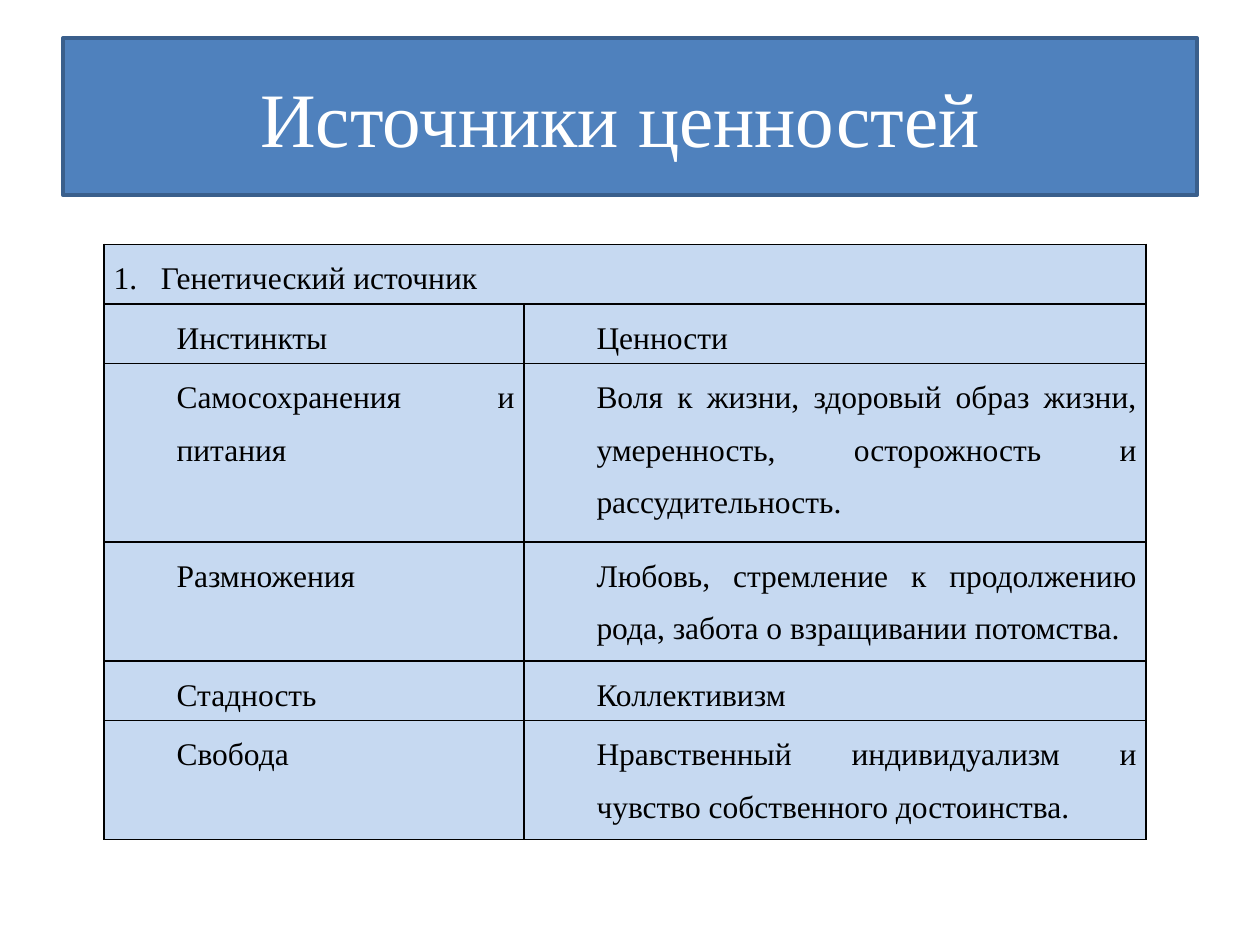
from dataclasses import dataclass

from lxml.etree import SubElement
from pptx import Presentation
from pptx.dml.color import RGBColor
from pptx.enum.shapes import MSO_SHAPE as Shape
from pptx.enum.text import MSO_ANCHOR as Anchor, PP_ALIGN as Align
from pptx.oxml.ns import qn
from pptx.util import Pt


@dataclass(frozen=True)
class Theme:
    font: str = "Times New Roman"
    title_size: int = 44
    body_size: int = 18
    banner: str = "4F81BD"
    banner_edge: str = "3A5F8C"
    cell: str = "C6D9F1"
    light: str = "FFFFFF"
    dark: str = "000000"


THEME = Theme()

HEADING = "Генетический источник"
VALUE_ROWS = [
    ("Инстинкты", "Ценности "),
    ("Самосохранения и питания",
     "Воля к жизни, здоровый образ жизни, умеренность, осторожность и рассудительность."),
    ("Размножения",
     "Любовь, стремление к продолжению рода, забота о взращивании потомства."),
    ("Стадность", "Коллективизм"),
    ("Свобода", "Нравственный индивидуализм и чувство собственного достоинства."),
]
ROW_LINES = [1, 1, 3, 2, 1, 2]  # row heights, in lines of text


def style_runs(paragraph, size, color):
    for run in paragraph.runs:
        run.font.name = THEME.font
        run.font.size = Pt(size)
        run.font.color.rgb = RGBColor.from_string(color)


def add_banner(slide, left, top, width, height):
    banner = slide.shapes.add_shape(
        Shape.RECTANGLE, Pt(left), Pt(top), Pt(width), Pt(height))
    banner.shadow.inherit = False
    banner.fill.solid()
    banner.fill.fore_color.rgb = RGBColor.from_string(THEME.banner)
    banner.line.color.rgb = RGBColor.from_string(THEME.banner_edge)
    banner.line.width = Pt(2)
    frame = banner.text_frame
    frame.text = "Источники ценностей "
    frame.vertical_anchor = Anchor.MIDDLE
    frame.paragraphs[0].alignment = Align.CENTER
    style_runs(frame.paragraphs[0], THEME.title_size, THEME.light)


def style_cell(cell):
    # Borders come before the fill in the cell properties
    properties = cell._tc.get_or_add_tcPr()
    for side in ("a:lnL", "a:lnR", "a:lnT", "a:lnB"):
        border = SubElement(properties, qn(side), w=str(Pt(1)))
        solid = SubElement(border, qn("a:solidFill"))
        SubElement(solid, qn("a:srgbClr"), val=THEME.dark)
    cell.fill.solid()
    cell.fill.fore_color.rgb = RGBColor.from_string(THEME.cell)
    cell.margin_left = cell.margin_right = Pt(5.4)
    cell.margin_top = cell.margin_bottom = Pt(0)


def write_cell(cell, text, indent=36, numbered=False):
    cell.text_frame.text = text
    paragraph = cell.text_frame.paragraphs[0]
    paragraph.alignment = Align.JUSTIFY
    paragraph.line_spacing = 1.5
    style_runs(paragraph, THEME.body_size, THEME.dark)
    properties = paragraph._p.get_or_add_pPr()
    properties.set("marL", str(Pt(indent)))
    properties.set("indent", str(Pt(-indent if numbered else 0)))
    if numbered:
        SubElement(properties, qn("a:buFont"), typeface=THEME.font)
        SubElement(properties, qn("a:buAutoNum"), type="arabicPeriod")


def add_values_table(slide, left, top, width, height):
    table = slide.shapes.add_table(
        len(ROW_LINES), 2, Pt(left), Pt(top), Pt(width), Pt(height)).table
    instinct_width = 240
    table.columns[0].width = Pt(instinct_width)
    table.columns[1].width = Pt(width - instinct_width)
    for row, lines in zip(table.rows, ROW_LINES):
        row.height = Pt(height * lines / sum(ROW_LINES))
    for cell in table.iter_cells():
        style_cell(cell)

    # Numbered heading across both columns
    table.cell(0, 0).merge(table.cell(0, 1))
    write_cell(table.cell(0, 0), HEADING, indent=27, numbered=True)

    # Instincts and the values that grow from them
    for row, texts in enumerate(VALUE_ROWS, start=1):
        for column, text in enumerate(texts):
            write_cell(table.cell(row, column), text)


def main():
    deck = Presentation()
    deck.slide_width, deck.slide_height = Pt(720), Pt(540)
    slide = deck.slides.add_slide(deck.slide_layouts[6])
    add_banner(slide, 36, 21.6, 648, 90)
    add_values_table(slide, 59.5, 139.7, 595.5, 340)
    deck.save("out.pptx")


if __name__ == "__main__":
    main()
